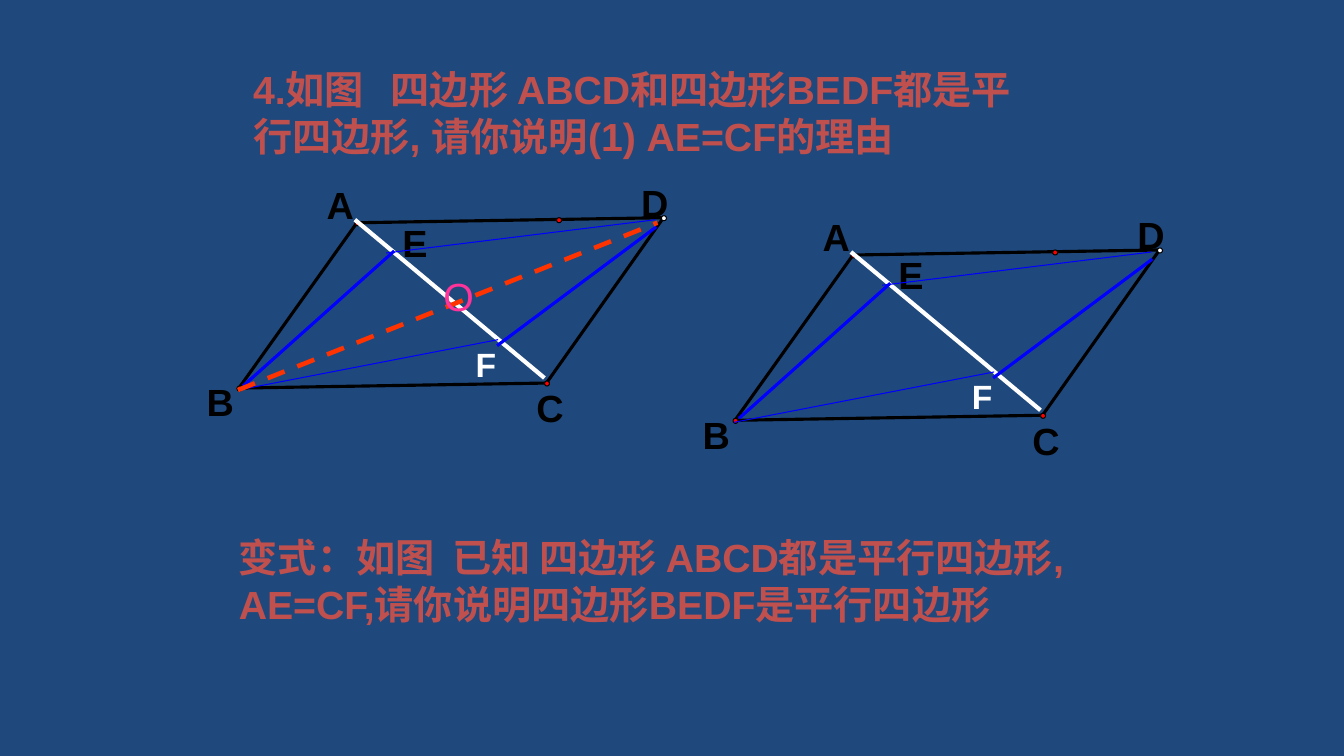
from lxml.etree import SubElement
from pptx import Presentation
from pptx.dml.color import RGBColor
from pptx.enum.dml import MSO_LINE
from pptx.enum.shapes import MSO_CONNECTOR, MSO_SHAPE
from pptx.enum.text import MSO_ANCHOR, MSO_AUTO_SIZE, PP_ALIGN
from pptx.oxml.ns import qn
from pptx.util import Pt

PX = 9144  # EMU per px, 100 px to the inch

NAVY = RGBColor(0x1F, 0x49, 0x7D)
BRICK = RGBColor(0xC0, 0x50, 0x4D)
BLACK = RGBColor(0, 0, 0)
WHITE = RGBColor(0xFF, 0xFF, 0xFF)
RED = RGBColor(0xFF, 0, 0)
BLUE = RGBColor(0, 0, 0xFF)
ORANGE = RGBColor(0xFF, 0x33, 0)
PINK = RGBColor(0xFF, 0x33, 0x99)

TASK = "4.如图   四边形 ABCD和四边形BEDF都是平行四边形, 请你说明(1) AE=CF的理由"
VARIANT = "变式：如图  已知 四边形 ABCD都是平行四边形, AE=CF,请你说明四边形BEDF是平行四边形"

# Corners of the left figure
A, B, C, D = (354, 221), (237, 385), (542, 380), (658, 216)
MID = (554, 218)  # marked point on side AD
SHIFT = (492, 32)  # from the left figure to the right one

SIDES = [(A, B), (C, B), (D, A), (D, C)]
INNER = [
    ((352, 218), (540, 375), WHITE, 3),
    ((391, 249), (241, 383), BLUE, 2.25),
    ((651, 225), (493, 343), BLUE, 2.25),
    ((236, 387), (494, 337), BLUE, 0.75),
    ((383, 251), (650, 218), BLUE, 0.75),
]
DOTS = [(MID, RED), (D, WHITE), (A, RED), (C, RED), (B, RED)]
NAMES = [
    ("E", 399, 218, 25),
    ("D", 636, 178, 27),
    ("A", 324, 180, 27),
    ("C", 532, 382, 27),
    ("B", 205, 376, 27),
]


def place(shape, x, y, w, h):
    shape.left, shape.top, shape.width, shape.height = (
        n * PX for n in (x, y, w, h))


def write(shape, text, size, color, bold=True, wrap=True):
    frame = shape.text_frame
    frame.text = text
    frame.word_wrap = wrap
    frame.auto_size = MSO_AUTO_SIZE.NONE
    frame.vertical_anchor = MSO_ANCHOR.TOP
    para = frame.paragraphs[0]
    para.alignment = PP_ALIGN.LEFT
    font = para.runs[0].font
    font.name, font.size, font.bold = "Arial", Pt(size), bold
    font.color.rgb = color


def add_text(shapes, box, text, size, color, bold=True, wrap=True):
    shape = shapes.add_textbox(*(n * PX for n in box))
    write(shape, text, size, color, bold, wrap)
    return shape


def add_name(shapes, text, x, y, w):
    """Add a corner letter in a tight box without insets."""
    frame = add_text(shapes, (x, y, w, 45), text, 27, BLACK,
                     wrap=False).text_frame
    frame.margin_left = frame.margin_right = 0
    frame.margin_top = frame.margin_bottom = 0


def add_line(shapes, start, end, color, width):
    line = shapes.add_connector(
        MSO_CONNECTOR.STRAIGHT, *(n * PX for n in start + end))
    line.line.color.rgb = color
    line.line.width = Pt(width)
    SubElement(line._element.spPr, qn("a:effectLst"))
    return line


def add_dot(shapes, center, color):
    x, y = center
    dot = shapes.add_shape(MSO_SHAPE.OVAL, 0, 0, PX, PX)
    place(dot, x - 2, y - 2, 5, 5)
    dot.shadow.inherit = False
    dot.fill.solid()
    dot.fill.fore_color.rgb = color
    dot.line.color.rgb = BLACK
    dot.line.width = Pt(0)


def add_figure(slide, dx, dy):
    """Add the two nested parallelograms, moved by dx and dy."""
    def move(point):
        return point[0] + dx, point[1] + dy

    group = slide.shapes.add_group_shape()
    shapes = group.shapes
    for start, end in SIDES:
        add_line(shapes, move(start), move(end), BLACK, 2.25)
    for center, color in DOTS:
        add_dot(shapes, move(center), color)
    for text, x, y, w in NAMES:
        add_name(shapes, text, x + dx, y + dy, w)
    for start, end, color, width in INNER:
        add_line(shapes, move(start), move(end), color, width)
    add_text(shapes, (462 + dx, 336 + dy, 39, 50), "F", 24, WHITE)


def main():
    deck = Presentation()
    deck.slide_width, deck.slide_height = 1333 * PX, 750 * PX
    slide = deck.slides.add_slide(deck.slide_layouts[5])
    slide.background.fill.solid()
    slide.background.fill.fore_color.rgb = NAVY

    title = slide.shapes.title
    place(title, 241, 60, 780, 151)
    write(title, TASK, 28, BRICK)

    add_figure(slide, 0, 0)
    cross = add_line(slide.shapes, (236, 387), (652, 221), ORANGE, 3.25)
    cross.line.dash_style = MSO_LINE.DASH
    add_text(slide.shapes, (430, 265, 50, 57), "O", 28, PINK,
             bold=False, wrap=False)
    add_text(slide.shapes, (227, 524, 895, 104), VARIANT, 28, BRICK)
    add_figure(slide, *SHIFT)

    deck.save("out.pptx")


if __name__ == "__main__":
    main()
